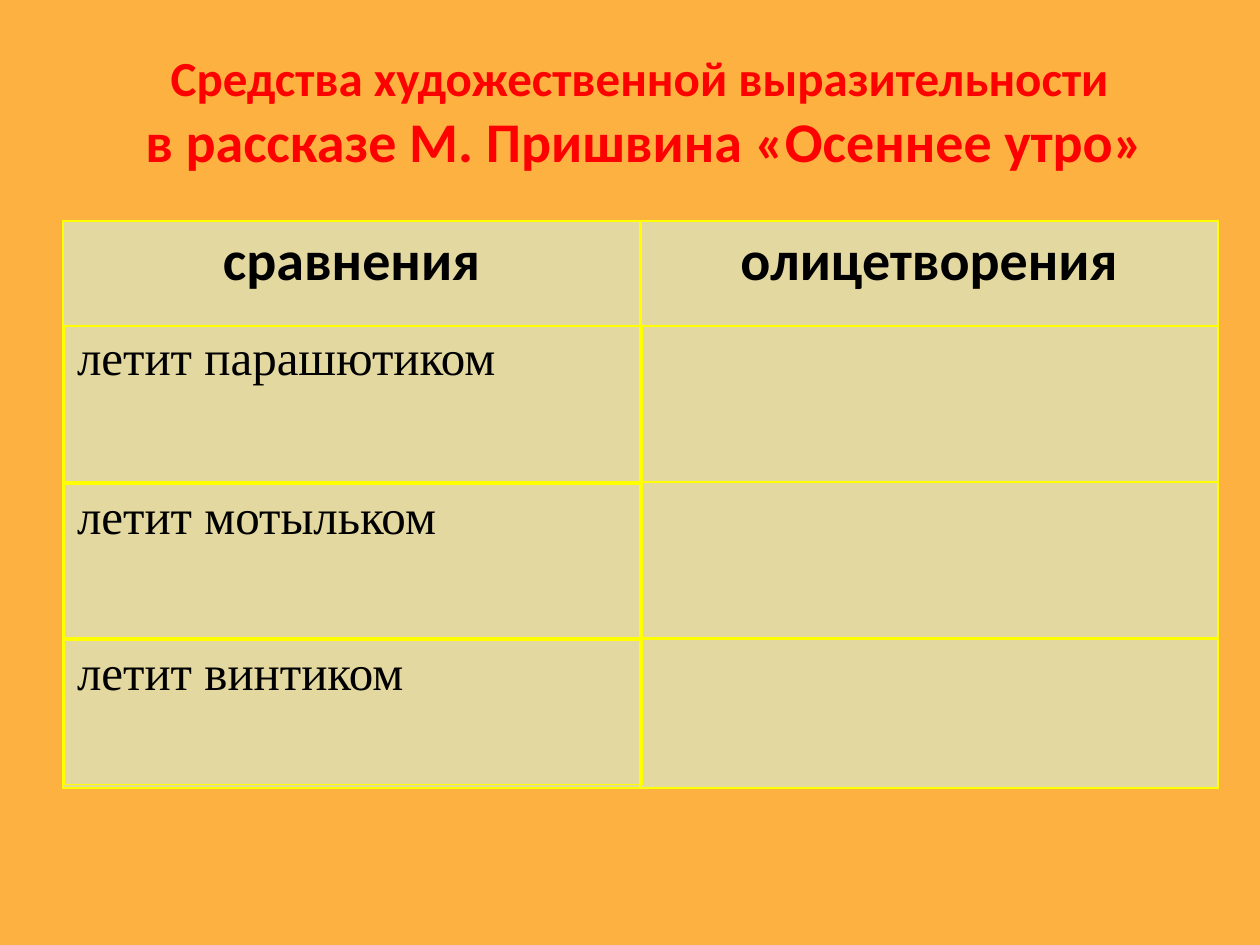
from lxml import etree
from pptx import Presentation
from pptx import util as u
from pptx.dml.color import RGBColor
from pptx.enum import text
from pptx.oxml import ns


def color(value):
    return RGBColor.from_string(value)


class SlideBuilder:
    title_color = "FF0000"
    text_color = "000000"
    cell_color = "CCFFFF"
    border_color = "FFFF00"
    heading_font = "Calibri"
    body_font = "Times New Roman"

    def __init__(self, deck, background):
        self.slide = deck.slides.add_slide(deck.slide_layouts[5])
        fill = self.slide.background.fill
        fill.solid()
        fill.fore_color.rgb = color(background)

    def style(self, font, name, size, hex_color, bold=False):
        font.name = name
        font.size = u.Pt(size)
        font.bold = bold
        font.color.rgb = color(hex_color)

    def title(self, lines, sizes, left, top, width, height):
        title = self.slide.shapes.title
        title.left, title.top = u.Cm(left), u.Cm(top)
        title.width, title.height = u.Cm(width), u.Cm(height)
        frame = title.text_frame
        frame.word_wrap = True
        frame.auto_size = text.MSO_AUTO_SIZE.NONE
        frame.vertical_anchor = text.MSO_ANCHOR.TOP
        paragraph = frame.paragraphs[0]
        paragraph.alignment = text.PP_ALIGN.CENTER
        for index, (line, size) in enumerate(zip(lines, sizes)):
            if index:
                paragraph.add_line_break()
            run = paragraph.add_run()
            run.text = line
            self.style(run.font, self.heading_font, size, self.title_color, bold=True)

    def table(self, left, top, column_widths, row_heights):
        table = self.slide.shapes.add_table(
            len(row_heights), len(column_widths), u.Cm(left), u.Cm(top),
            u.Cm(sum(column_widths)), u.Cm(sum(row_heights))).table
        table.first_row = table.horz_banding = False
        for column, width in zip(table.columns, column_widths):
            column.width = u.Cm(width)
        for row, height in zip(table.rows, row_heights):
            row.height = u.Cm(height)
        return table

    def borders(self, cell, width):
        properties = cell._tc.get_or_add_tcPr()
        for position, side in enumerate(("lnL", "lnR", "lnT", "lnB")):
            line = etree.Element(ns.qn(f"a:{side}"), w=str(u.Pt(width)))
            solid = etree.SubElement(line, ns.qn("a:solidFill"))
            etree.SubElement(solid, ns.qn("a:srgbClr"), val=self.border_color)
            properties.insert(position, line)

    def tint(self, cell, opacity):
        cell.fill.solid()
        cell.fill.fore_color.rgb = color(self.cell_color)
        rgb = cell._tc.tcPr.find(".//" + ns.qn("a:srgbClr"))
        etree.SubElement(rgb, ns.qn("a:alpha"), val=str(opacity * 1000))

    def cell_text(self, cell, words, font, size, bold=False, align=text.PP_ALIGN.LEFT):
        cell.text = words
        paragraph = cell.text_frame.paragraphs[0]
        paragraph.alignment = align
        self.style(paragraph.font, font, size, self.text_color, bold)

    def grid(self, headings, left, top, column_widths, row_heights):
        table = self.table(left, top, column_widths, row_heights)
        for cell in table.iter_cells():
            self.tint(cell, 50)
            self.borders(cell, 1.5)
        for cell, heading in zip(table.rows[0].cells, headings):
            self.cell_text(cell, heading, self.heading_font, 32, True, text.PP_ALIGN.CENTER)

    def examples(self, phrases, left, top, width, row_heights):
        table = self.table(left, top, [width], row_heights)
        for cell, phrase in zip(table.iter_cells(), phrases):
            cell.fill.background()
            self.borders(cell, 1)
            self.cell_text(cell, phrase, self.body_font, 28)


def main():
    deck = Presentation()
    deck.slide_width, deck.slide_height = u.Cm(25.4), u.Cm(19.05)
    page = SlideBuilder(deck, "FCB140")

    # Topic of the lesson
    page.title(["Средства художественной выразительности ",
                "в рассказе М. Пришвина «Осеннее утро»"],
               [28, 32], 2.1, 0.84, 21.8, 2.82)

    # Two-column grid with headings
    column = 11.64
    page.grid(["сравнения", "олицетворения"], 1.27, 4.45,
              [column, column], [2.12, 3.15, 3.15, 3.02])

    # Comparisons laid over the left column
    page.examples(["летит парашютиком", "летит мотыльком", "летит винтиком"],
                  1.3, 6.56, column, [3.2, 3.15, 2.9])

    deck.save("out.pptx")


if __name__ == "__main__":
    main()
